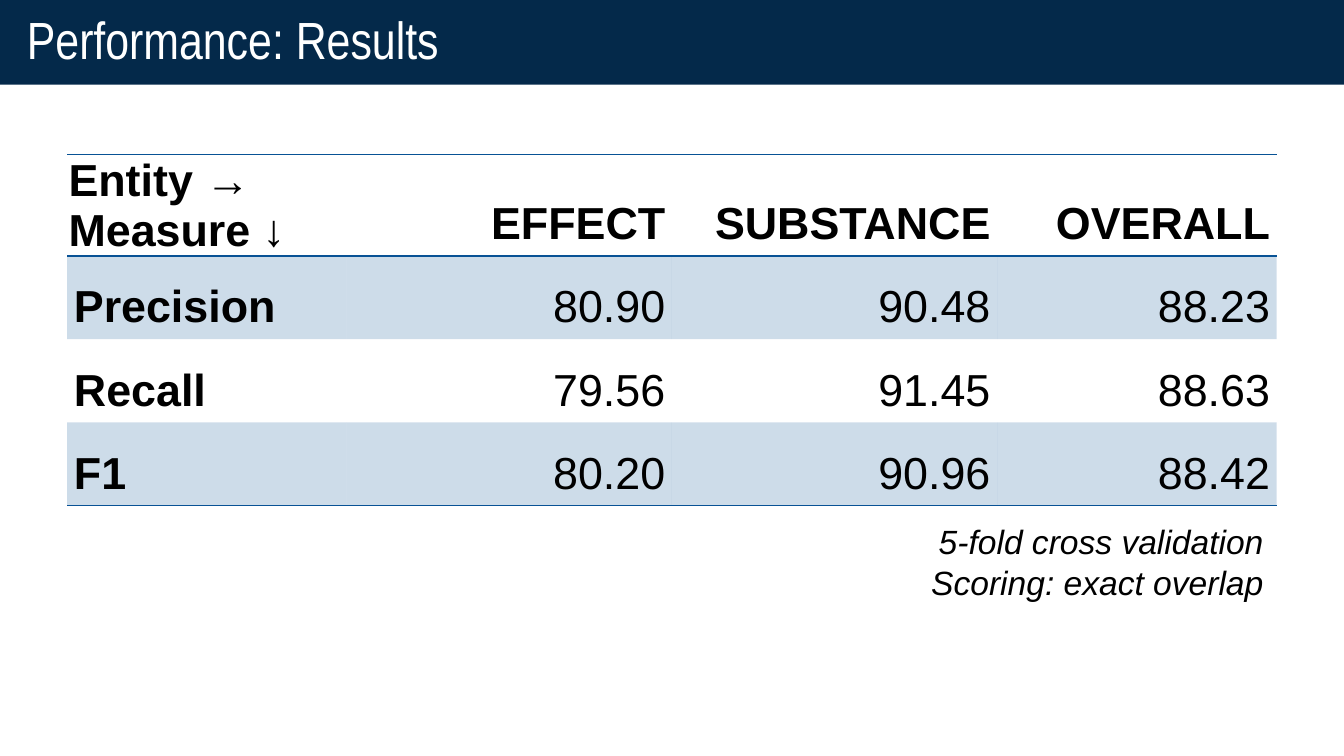
from lxml.etree import SubElement
from pptx import Presentation
from pptx.dml.color import RGBColor
from pptx.enum.text import MSO_ANCHOR as Anchor, MSO_AUTO_SIZE as AutoSize, PP_ALIGN as Align
from pptx.oxml.ns import qn
from pptx.util import Inches, Pt

COLORS = {"banner": "04294A", "accent": "085295", "text": "000000", "title": "FFFFFF"}
TITLE = "Performance: Results"
RESULTS = [
    ("Entity → Measure ↓", "EFFECT", "SUBSTANCE", "OVERALL"),
    ("Precision", "80.90", "90.48", "88.23"),
    ("Recall", "79.56", "91.45", "88.63"),
    ("F1", "80.20", "90.96", "88.42"),
]
FOOTNOTES = ["5-fold cross validation", "Scoring: exact overlap"]
SLIDE_WIDTH = 10
SLIDE_HEIGHT = SLIDE_WIDTH * 9 / 16
COLUMN_WIDTHS = [2.08, 2.42, 2.42, 2.08]
HEADER_HEIGHT, ROW_HEIGHT = 0.75, 0.62
BAND_OPACITY = 20


def color(name):
    return RGBColor.from_string(COLORS[name])


def place(shape, left, top, width, height):
    shape.left, shape.top = Inches(left), Inches(top)
    shape.width, shape.height = Inches(width), Inches(height)


def set_margins(target, left, top, right, bottom):
    target.margin_left, target.margin_top = Inches(left), Inches(top)
    target.margin_right, target.margin_bottom = Inches(right), Inches(bottom)


def add_run(paragraph, text, size, font="Arial", ink="text", bold=False, italic=False):
    run = paragraph.add_run()
    run.text = text
    run.font.name, run.font.size = font, Pt(size)
    run.font.bold, run.font.italic = bold, italic
    run.font.color.rgb = color(ink)


def set_borders(cell, ruled_sides):
    """Rule the named sides (T, B) and clear the others; call before filling."""
    properties = cell._tc.get_or_add_tcPr()
    for side in "LRTB":
        line = SubElement(properties, qn(f"a:ln{side}"), w=str(Pt(1)))
        if side in ruled_sides:
            fill = SubElement(line, qn("a:solidFill"))
            SubElement(fill, qn("a:srgbClr"), val=COLORS["accent"])
        else:
            SubElement(line, qn("a:noFill"))


def fill_band(cell):
    cell.fill.solid()
    cell.fill.fore_color.rgb = color("accent")
    tint = cell._tc.tcPr.find(f"{qn('a:solidFill')}/{qn('a:srgbClr')}")
    SubElement(tint, qn("a:alpha"), val=str(BAND_OPACITY * 1000))


def add_title(slide):
    title = slide.shapes.title
    place(title, 0, 0, SLIDE_WIDTH, 0.63)
    title.fill.solid()
    title.fill.fore_color.rgb = color("banner")
    frame = title.text_frame
    frame.vertical_anchor = Anchor.MIDDLE
    frame.auto_size = AutoSize.NONE
    set_margins(frame, 0.2, 0.1, 0.2, 0.1)
    paragraph = frame.paragraphs[0]
    paragraph.alignment = Align.LEFT
    paragraph.line_spacing = 0.9
    add_run(paragraph, TITLE, 28, "Arial Narrow", "title")


def add_results(slide):
    last = len(RESULTS) - 1
    height = HEADER_HEIGHT + last * ROW_HEIGHT
    table = slide.shapes.add_table(
        len(RESULTS), len(COLUMN_WIDTHS), Inches(0.5), Inches(1.15),
        Inches(sum(COLUMN_WIDTHS)), Inches(height)).table
    table.first_row = table.horz_banding = False
    for column, width in zip(table.columns, COLUMN_WIDTHS):
        column.width = Inches(width)
    for r, values in enumerate(RESULTS):
        table.rows[r].height = Inches(ROW_HEIGHT if r else HEADER_HEIGHT)
        ruled_sides = {0: "TB", 1: "T", last: "B"}.get(r, "")
        for c, value in enumerate(values):
            cell = table.cell(r, c)
            corner = r == c == 0
            cell.vertical_anchor = Anchor.MIDDLE if corner else Anchor.BOTTOM
            set_margins(cell, *((0.01, 0.01, 0.01, 0) if corner else (0.05,) * 4))
            set_borders(cell, ruled_sides)
            if r % 2:
                fill_band(cell)
            else:
                cell.fill.background()
            paragraph = cell.text_frame.paragraphs[0]
            paragraph.alignment = Align.RIGHT if c else Align.LEFT
            add_run(paragraph, value, 24, bold=r == 0 or c == 0)


def add_footnotes(slide):
    box = slide.shapes.add_textbox(Inches(6.21), Inches(3.83), Inches(3.29), Inches(0.71))
    frame = box.text_frame
    frame.word_wrap = True
    frame.auto_size = AutoSize.SHAPE_TO_FIT_TEXT
    for i, note in enumerate(FOOTNOTES):
        paragraph = frame.add_paragraph() if i else frame.paragraphs[0]
        paragraph.alignment = Align.RIGHT
        add_run(paragraph, note, 18, italic=True)


def main():
    deck = Presentation()
    deck.slide_width, deck.slide_height = Inches(SLIDE_WIDTH), Inches(SLIDE_HEIGHT)
    slide = deck.slides.add_slide(deck.slide_layouts.get_by_name("Title Only"))
    add_title(slide)
    add_results(slide)
    add_footnotes(slide)
    deck.save("out.pptx")


if __name__ == "__main__":
    main()
